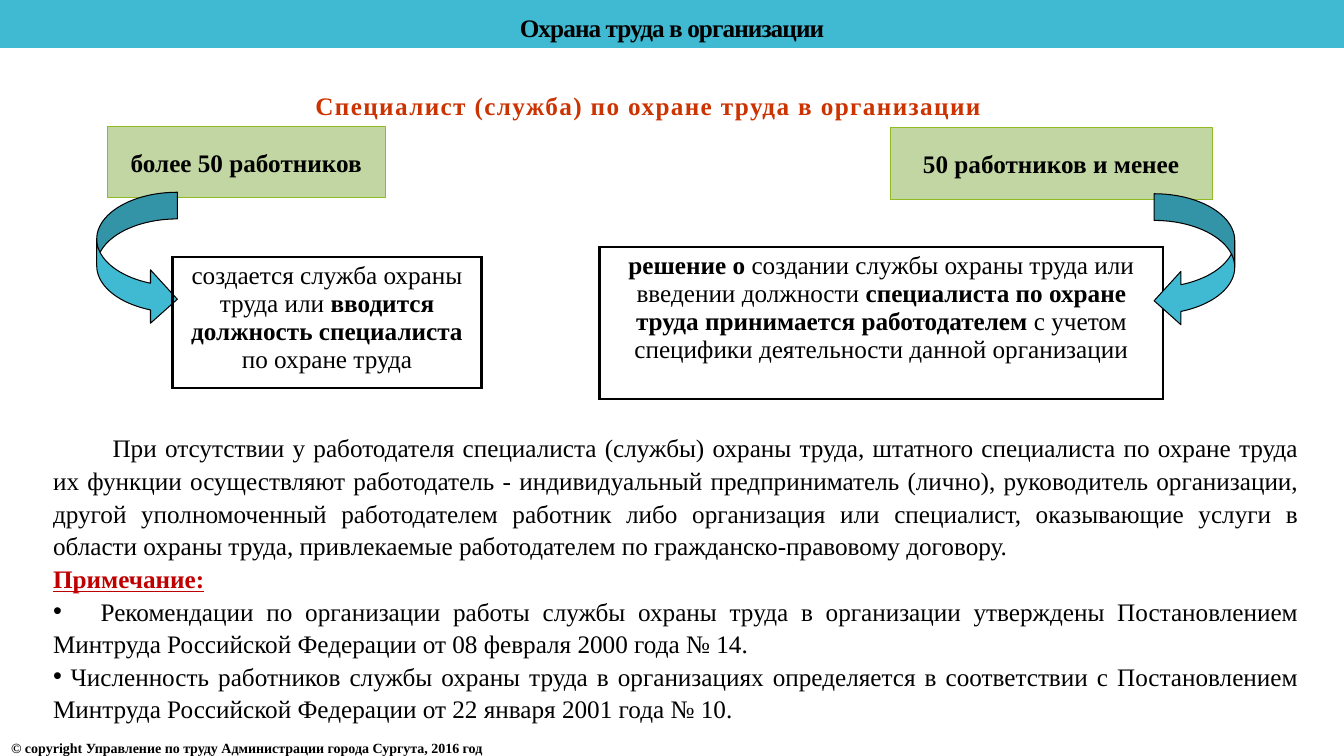
"""Build a slide on labour protection duties by size of staff."""
import dataclasses

import lxml.etree
import pptx
import pptx.dml.color
import pptx.enum.shapes
import pptx.enum.text
import pptx.oxml.ns
import pptx.util

Pt = pptx.util.Pt
Shape = pptx.enum.shapes.MSO_SHAPE
Align = pptx.enum.text.PP_ALIGN
Anchor = pptx.enum.text.MSO_ANCHOR
qn = pptx.oxml.ns.qn


@dataclasses.dataclass(frozen=True)
class Theme:
    """Hold the colours, font and type sizes."""
    font: str = "Times New Roman"
    size: int = 18
    small: int = 10
    ink: str = "000000"
    teal: str = "40BAD2"
    green: str = "C1D6A3"
    edge: str = "90BB23"
    rust: str = "CC3300"
    red: str = "C00000"


THEME = Theme()


def color(code):
    """Turn a hex code into a colour."""
    return pptx.dml.color.RGBColor.from_string(code)


def write(par, text, *, size=THEME.size, ink=THEME.ink, bold=False, under=False, track=0):
    """Add a run of text with its format."""
    run = par.add_run()
    run.text = text
    font = run.font
    font.name, font.size, font.bold, font.underline = THEME.font, Pt(size), bold, under
    font.color.rgb = color(ink)
    if track:
        run._r.get_or_add_rPr().set("spc", str(round(track * 100)))


def place(shape, box):
    """Move and size a shape."""
    shape.left, shape.top, shape.width, shape.height = map(Pt, box)


def paint(shape, fill, edge):
    """Set the fill and the line of a shape."""
    shape.fill.solid()
    shape.fill.fore_color.rgb = color(fill)
    shape.line.color.rgb = color(edge)
    shape.line.width = Pt(0.75)


def add_title(slide, text):
    """Fill the title bar."""
    bar = slide.shapes.title
    place(bar, (0, 0, 960, 34))
    paint(bar, THEME.teal, THEME.teal)
    frame = bar.text_frame
    frame.auto_size = pptx.enum.text.MSO_AUTO_SIZE.NONE
    frame.vertical_anchor = Anchor.BOTTOM
    par = frame.paragraphs[0]
    par.alignment, par.line_spacing = Align.CENTER, 0.9
    write(par, text, bold=True, track=-0.65)


def add_label(slide, box, text, inset=None, anchor=Anchor.TOP, **form):
    """Add a line of free text."""
    frame = slide.shapes.add_textbox(*map(Pt, box)).text_frame
    frame.word_wrap = True
    frame.vertical_anchor = anchor
    if inset is not None:
        frame.margin_left = frame.margin_right = Pt(inset)
        frame.margin_top = frame.margin_bottom = Pt(inset)
    write(frame.paragraphs[0], text, **form)


def add_shape(slide, kind, box, fill, edge):
    """Add a preset shape without shadow."""
    shape = slide.shapes.add_shape(kind, *map(Pt, box))
    shape.shadow.inherit = False
    paint(shape, fill, edge)
    return shape


def add_case(slide, box, text):
    """Add a green box that names a case."""
    frame = add_shape(slide, Shape.RECTANGLE, box, THEME.green, THEME.edge).text_frame
    frame.vertical_anchor = Anchor.MIDDLE
    par = frame.paragraphs[0]
    par.alignment = Align.CENTER
    write(par, text, bold=True)


def add_arrow(slide, kind, left, top):
    """Add a curved arrow from a case to its rule."""
    arrow = add_shape(slide, kind, (left, top, 57.6, 95.5), THEME.teal, THEME.ink)
    for i, value in enumerate((0.331, 0.662, 0.333)):
        arrow.adjustments[i] = value


def add_rule(slide, box, parts):
    """Add a framed table cell with plain and bold parts."""
    table = slide.shapes.add_table(1, 1, *map(Pt, box)).table
    table.first_row = table.horz_banding = False
    cell = table.cell(0, 0)
    props = cell._tc.get_or_add_tcPr()
    for side in "LRTB":
        line = lxml.etree.SubElement(props, qn(f"a:ln{side}"), w=str(Pt(2.25)))
        fill = lxml.etree.SubElement(line, qn("a:solidFill"))
        lxml.etree.SubElement(fill, qn("a:srgbClr"), val=THEME.ink)
    cell.fill.background()
    par = cell.text_frame.paragraphs[0]
    par.alignment = Align.CENTER
    for text, bold in parts:
        write(par, text, bold=bold)


def add_item(par, text, first=0, tab=None, **form):
    """Fill a body paragraph, with a bullet if a tab is given."""
    props = par._p.get_or_add_pPr()
    props.set("marL", "0")
    props.set("indent", str(Pt(first)))
    if tab is None:
        lxml.etree.SubElement(props, qn("a:buNone"))
    else:
        lxml.etree.SubElement(props, qn("a:buChar"), char="•")
        tabs = lxml.etree.SubElement(props, qn("a:tabLst"))
        lxml.etree.SubElement(tabs, qn("a:tab"), pos=str(Pt(tab)), algn="l")
        text = "\t" + text
    par.alignment, par.line_spacing, par.space_before = Align.JUSTIFY, 1.08, Pt(0)
    write(par, text, **form)


def add_body(slide, items):
    """Fill the body with notes."""
    body = slide.placeholders[1]
    place(body, (30.7, 303.8, 904.3, 210))
    frame = body.text_frame
    frame.auto_size = pptx.enum.text.MSO_AUTO_SIZE.NONE
    for i, (text, form) in enumerate(items):
        par = frame.add_paragraph() if i else frame.paragraphs[0]
        add_item(par, text, **form)


def main():
    """Build and save the slide."""
    deck = pptx.Presentation()
    deck.slide_width, deck.slide_height = Pt(960), Pt(540)
    slide = deck.slides.add_slide(deck.slide_layouts[1])
    add_title(slide, "Охрана труда в организации")
    add_label(slide, (218.2, 61.2, 512.6, 51), "Специалист (служба) по охране труда в организации",
              ink=THEME.rust, bold=True, track=1)
    add_case(slide, (76.5, 90.2, 198.7, 51), "более 50 работников")
    add_arrow(slide, Shape.CURVED_RIGHT_ARROW, 69.1, 137.3)
    add_rule(slide, (123.1, 183.6, 221, 93.6), [
        ("создается служба охраны труда или ", False),
        ("вводится должность специалиста", True),
        (" по охране труда", False)])
    add_case(slide, (635.8, 91.2, 230, 51), "50 работников и менее")
    add_rule(slide, (428.4, 176.4, 402.3, 108.7), [
        ("решение о", True),
        (" создании службы охраны труда или введении должности ", False),
        ("специалиста по охране труда принимается работодателем", True),
        (" с учетом специфики деятельности данной организации", False)])
    add_arrow(slide, Shape.CURVED_LEFT_ARROW, 824.4, 138.4)
    add_body(slide, [
        ("При отсутствии у работодателя специалиста (службы) охраны труда, штатного "
         "специалиста по охране труда их функции осуществляют работодатель - индивидуальный "
         "предприниматель (лично), руководитель организации, другой уполномоченный "
         "работодателем работник либо организация или специалист, оказывающие услуги в "
         "области охраны труда, привлекаемые работодателем по гражданско-правовому договору.",
         {"first": 42.5}),
        ("Примечание:", {"ink": THEME.red, "bold": True, "under": True}),
        ("Рекомендации по организации работы службы охраны труда в организации утверждены "
         "Постановлением Минтруда Российской Федерации от 08 февраля 2000 года № 14.",
         {"tab": 34}),
        ("Численность работников службы охраны труда в организациях определяется в "
         "соответствии с Постановлением Минтруда Российской Федерации от 22 января 2001 "
         "года № 10.", {"tab": 12.5})])
    add_label(slide, (7.9, 527.8, 544.3, 12.2),
              "© copyright Управление по труду Администрации города Сургута, 2016 год",
              inset=0, anchor=Anchor.BOTTOM, size=THEME.small, bold=True)
    deck.save("out.pptx")


if __name__ == "__main__":
    main()
